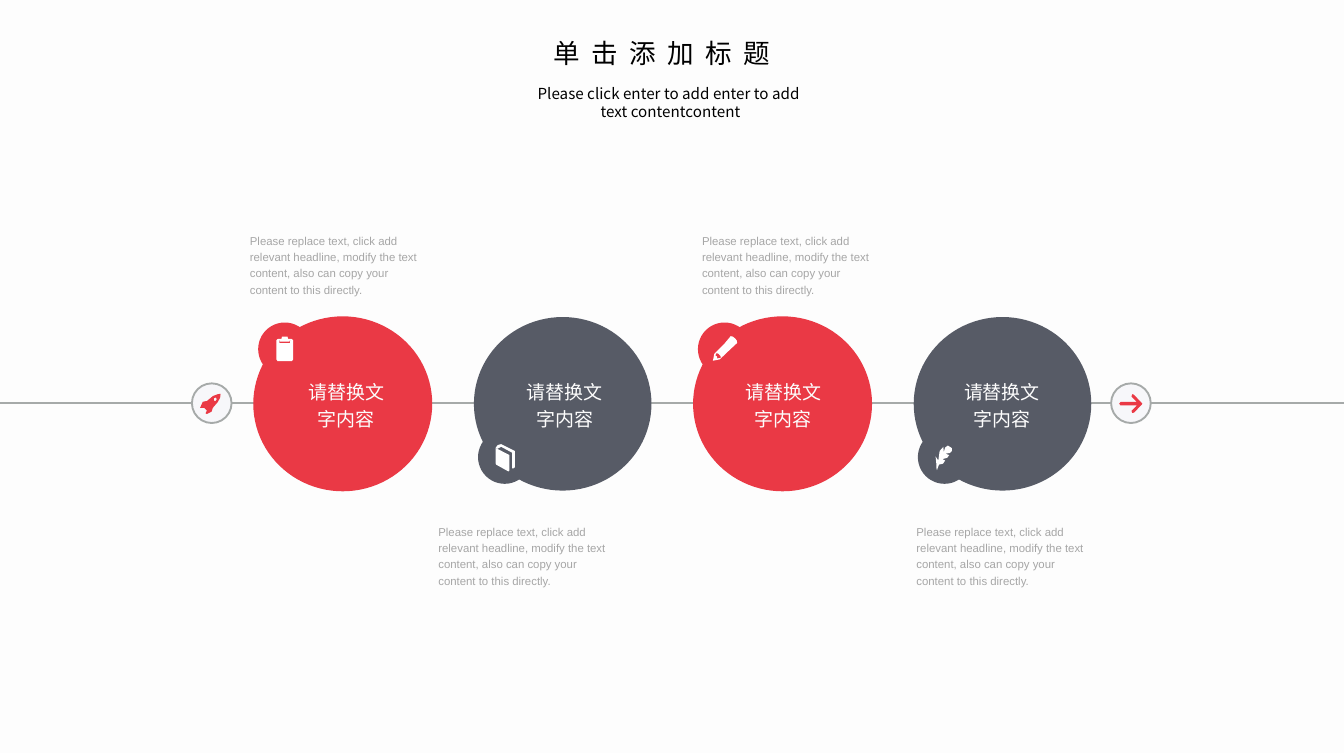
from dataclasses import dataclass
from itertools import pairwise

from lxml.etree import SubElement
from pptx import Presentation
from pptx.dml.color import RGBColor
from pptx.enum.shapes import MSO_CONNECTOR, MSO_SHAPE
from pptx.enum.text import MSO_ANCHOR, MSO_AUTO_SIZE, PP_ALIGN
from pptx.oxml.ns import qn
from pptx.util import Inches, Pt


@dataclass(frozen=True)
class Theme:
    background: str = "FDFDFD"
    red: str = "EA3945"
    slate: str = "575B66"
    rail: str = "A6AAA9"
    node: str = "F7F7FA"
    white: str = "FFFFFF"
    label: str = "FCFCFC"
    caption: str = "A6A6A6"
    black: str = "000000"
    cjk: str = "Noto Sans CJK SC"
    latin: str = "Arial"
    title_size: float = 14
    subtitle_size: float = 8
    label_size: float = 10
    caption_size: float = 6


THEME = Theme()
SLIDE_W, SLIDE_H = 9.84, 5.51
RAIL_Y = 2.95
CIRCLE_W, CIRCLE_H = 1.3, 1.27
BADGE, NODE = 0.39, 0.29
CIRCLES_LEFT, CIRCLE_STEP = 1.86, 1.61
LABELS_LEFT, LABEL_STEP = 2.23, 1.6
NODE_CENTERS = (1.55, 8.28)

LABEL = "请替换文字内容"
CAPTION = ("Please replace text, click add relevant headline, modify the text "
           "content, also can copy your content to this directly.")

# Icon outlines, in thousandths of an inch from the icon centre
CLIPBOARD = [
    [(-62, -65), (-50, -75), (-42, -75), (-38, -45), (38, -45), (42, -75),
     (50, -75), (62, -65), (62, 75), (52, 88), (-52, 88), (-62, 75)],
    [(-20, -92), (20, -92), (24, -76), (42, -74), (34, -55), (-34, -55),
     (-42, -74), (-24, -76)],
]
BOOK = [
    [(-65, -66), (35, -15), (35, 98), (28, 105), (-62, 55), (-65, 48)],
    [(-65, -70), (-50, -88), (-25, -95), (75, -45), (75, 75), (60, 85),
     (55, 78), (55, -32), (-25, -75), (-50, -62)],
]
PENCIL = [
    [(45, -95), (60, -92), (78, -78), (90, -62), (92, -45), (35, 8),
     (-35, 75), (-85, 85), (-75, 35), (-5, -35)],
    [(-55, 68), (-55, 55), (-68, 45), (-58, 28), (-42, 35), (-28, 52),
     (-28, 65)],
]
FEATHER = [
    [(-55, 95), (-40, 55), (-10, 48), (5, 25), (-15, 15), (20, 5), (35, -15),
     (5, -25), (40, -30), (55, -45), (55, -65), (25, -85), (5, -70),
     (-5, -35), (-8, -75), (-35, -45), (-45, 25), (-65, -5), (-60, 40),
     (-58, 85)],
]
ROCKET = [
    [(65, -68), (45, -65), (10, -52), (-35, -15), (-65, -10), (-85, 35),
     (-55, 35), (-35, 55), (-45, 75), (-35, 80), (0, 62), (8, 35), (45, -8),
     (62, -40)],
    [(15, -22), (18, -38), (30, -40), (38, -30), (32, -18), (22, -14)],
]
ARROW = [
    [(85, 5), (22, -62), (10, -65), (5, -48), (45, -8), (-75, -8), (-85, 5),
     (-75, 17), (45, 17), (5, 57), (10, 72), (24, 70)],
]

# Colour, icon, whether it points up, caption left
STEPS = [
    (THEME.red, CLIPBOARD, True, 1.83),
    (THEME.slate, BOOK, False, 3.21),
    (THEME.red, PENCIL, True, 5.14),
    (THEME.slate, FEATHER, False, 6.71),
]


def rgb(color):
    return RGBColor.from_string(color)


def paint(shape, fill, line=None, width=0.75):
    shape.shadow.inherit = False
    shape.fill.solid()
    shape.fill.fore_color.rgb = rgb(fill)
    if line:
        shape.line.color.rgb = rgb(line)
        shape.line.width = Pt(width)
    else:
        shape.line.fill.background()


def add_oval(slide, left, top, width, height, fill, line=None, line_width=0.75):
    oval = slide.shapes.add_shape(MSO_SHAPE.OVAL, Inches(left), Inches(top),
                                  Inches(width), Inches(height))
    paint(oval, fill, line, line_width)


def add_icon(slide, contours, center_x, center_y, color):
    first, *others = contours
    outline = slide.shapes.build_freeform(*first[0], scale=Inches(1) / 1000)
    outline.add_line_segments(first[1:], close=True)
    for contour in others:
        outline.move_to(*contour[0])
        outline.add_line_segments(contour[1:], close=True)
    paint(outline.convert_to_shape(Inches(center_x), Inches(center_y)), color)


def write(box, text, size, color, font, align=PP_ALIGN.LEFT, anchor=MSO_ANCHOR.TOP):
    """Fill a box with text and format every run."""
    frame = box.text_frame
    frame.text = text
    frame.vertical_anchor = anchor
    for paragraph in frame.paragraphs:
        paragraph.alignment = align
        for run in paragraph.runs:
            run.font.size = Pt(size)
            run.font.color.rgb = rgb(color)
            run.font.name = font
            SubElement(run.font._element, qn("a:ea"), typeface=THEME.cjk)
    return frame


def add_body_text(slide, left, top, width, height, *text_style):
    box = slide.shapes.add_textbox(Inches(left), Inches(top), Inches(width), Inches(height))
    frame = write(box, *text_style)
    frame.word_wrap = True
    frame.margin_left = frame.margin_right = frame.margin_top = frame.margin_bottom = 0
    frame.paragraphs[0].line_spacing = 1.2
    frame.paragraphs[0].space_before = Pt(7)


def add_heading(slide, left, top):
    # Title
    title = slide.shapes.title
    title.left, title.top = Inches(left + 0.16), Inches(top)
    title.width, title.height = Inches(1.88), Inches(0.34)
    title_frame = write(title, "单击添加标题", THEME.title_size, THEME.black, THEME.cjk)
    title_frame.paragraphs[0].runs[0].font._element.set("spc", "600")

    # Subtitle
    subtitle = slide.shapes.add_textbox(Inches(left), Inches(top + 0.35),
                                        Inches(2.24), Inches(0.37))
    subtitle_frame = write(
        subtitle, "Please click enter to add enter to add \ntext contentcontent",
        THEME.subtitle_size, THEME.black, THEME.cjk, PP_ALIGN.CENTER)
    for frame in (title_frame, subtitle_frame):
        frame.word_wrap = False
        frame.auto_size = MSO_AUTO_SIZE.SHAPE_TO_FIT_TEXT


def add_rail(slide, stops, y):
    for start, end in pairwise(stops):
        rail = slide.shapes.add_connector(MSO_CONNECTOR.STRAIGHT, Inches(start), Inches(y),
                                          Inches(end), Inches(y))
        rail.line.color.rgb = rgb(THEME.rail)
        rail.line.width = Pt(1)
        SubElement(rail._element.spPr, qn("a:effectLst"))


def add_step(slide, left, top, label_left, color, icon, points_up, caption_left):
    # Circle with its badge
    add_oval(slide, left, top, CIRCLE_W, CIRCLE_H, color, color if points_up else None)
    badge_left, badge_top = left + 0.03, top + (0.04 if points_up else 0.83)
    add_oval(slide, badge_left, badge_top, BADGE, BADGE, color)
    add_icon(slide, icon, badge_left + BADGE / 2, badge_top + BADGE / 2, THEME.white)

    # Label and caption
    add_body_text(slide, label_left, top + 0.43, 0.61, 0.4, LABEL, THEME.label_size,
                  THEME.label, THEME.latin, PP_ALIGN.CENTER, MSO_ANCHOR.MIDDLE)
    add_body_text(slide, caption_left, top + (-0.63 if points_up else 1.5), 1.27, 0.48,
                  CAPTION, THEME.caption_size, THEME.caption, THEME.latin)


def add_end_node(slide, center_x, center_y, icon):
    add_oval(slide, center_x - NODE / 2, center_y - NODE / 2, NODE, NODE,
             THEME.node, THEME.rail, 1)
    add_icon(slide, icon, center_x, center_y, THEME.red)


def main():
    deck = Presentation()
    deck.slide_width, deck.slide_height = Inches(SLIDE_W), Inches(SLIDE_H)
    slide = deck.slides.add_slide(deck.slide_layouts[5])
    slide.background.fill.solid()
    slide.background.fill.fore_color.rgb = rgb(THEME.background)

    add_heading(slide, 3.79, 0.22)

    # Timeline
    lefts = [CIRCLES_LEFT + i * CIRCLE_STEP for i in range(len(STEPS))]
    start, end = NODE_CENTERS
    centers = [left + CIRCLE_W / 2 for left in lefts]
    add_rail(slide, [0, start, *centers, end, SLIDE_W], RAIL_Y)
    for i, (left, step) in enumerate(zip(lefts, STEPS)):
        add_step(slide, left, 2.32, LABELS_LEFT + i * LABEL_STEP, *step)
    for center, icon in zip(NODE_CENTERS, (ROCKET, ARROW)):
        add_end_node(slide, center, RAIL_Y, icon)

    deck.save("out.pptx")


if __name__ == "__main__":
    main()
